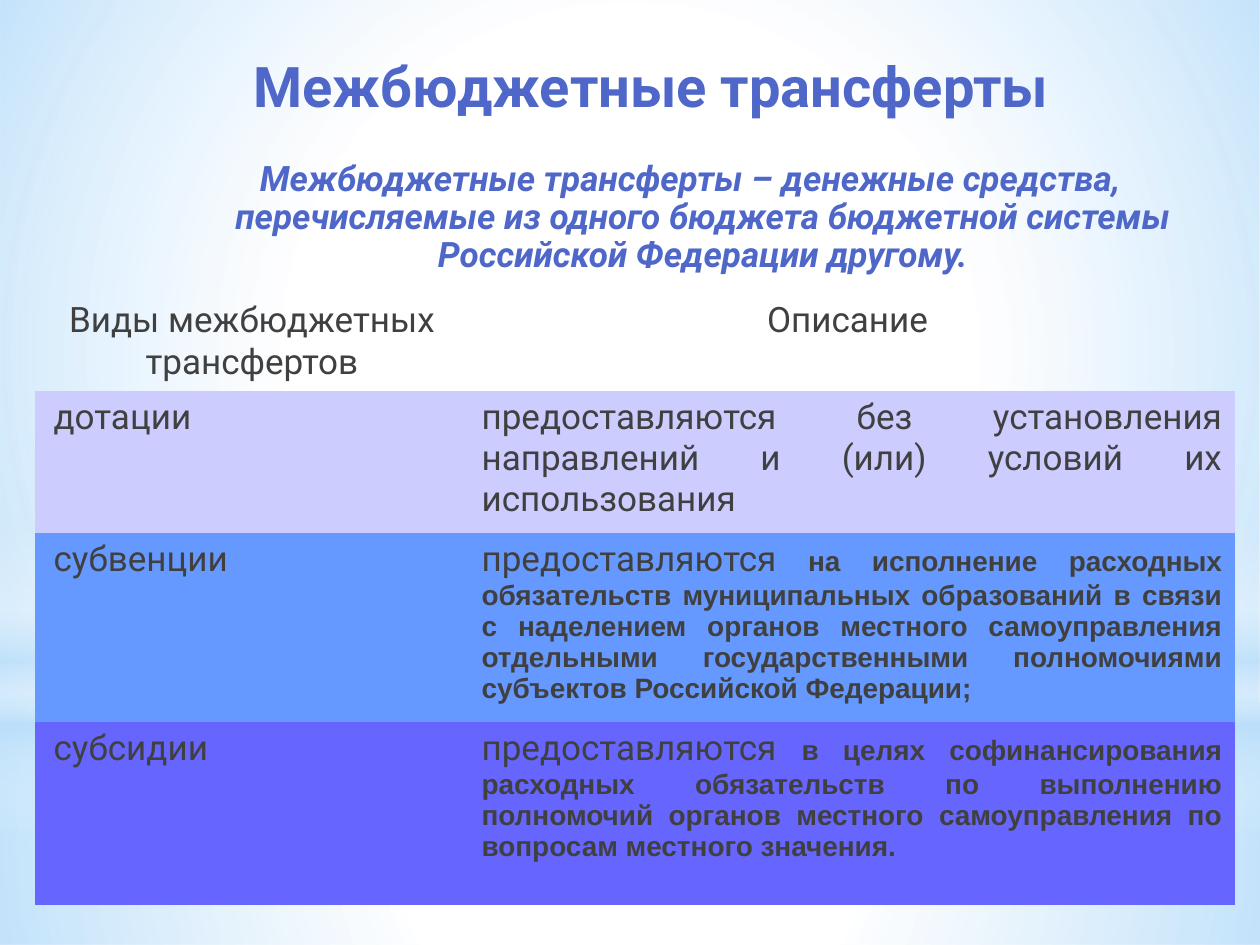
from lxml import etree
from pptx import Presentation
from pptx.dml.color import RGBColor as RGB
from pptx.enum.shapes import MSO_SHAPE as Shape
from pptx.enum.text import MSO_ANCHOR as Anchor, PP_ALIGN as Align
from pptx.oxml import parse_xml
from pptx.oxml.ns import nsdecls, qn
from pptx.util import Pt

SCALE = 914400 / 126  # EMU in one px
COLORS = {
    "white": "FFFFFF", "sky": "B4DCFA", "title": "4E67C8", "text": "404040",
    "lilac": "CCCCFF", "blue": "6699FF", "violet": "6666FF",
}
PLAIN_GRID = "{2D5ABB26-0587-4C30-8999-92F81FD0307C}"  # no style, no grid

# Font formats
TITLE = {"size": Pt(32), "name": "Roboto", "bold": True}
LEAD = {"size": Pt(20), "name": "Roboto", "bold": True, "italic": True}
CELL = {"size": Pt(20), "name": "Roboto", "bold": False}
NOTE = {"size": Pt(16), "name": "Arial", "bold": True}

# Background layers: shape, box, stops (percent, colour, opacity), radial or not
GLOWS = [
    (Shape.RECTANGLE, (0, 703, 1260, 242),
     [(0, "white", 91), (37, "white", 76), (100, "sky", 79)], True),
    (Shape.RECTANGLE, (0, 0, 1260, 703),
     [(0, "white", 89), (48, "white", 62), (100, "sky", 79)], True),
    (Shape.RECTANGLE, (0, 519, 1260, 315),
     [(0, "white", 0), (29, "white", 30), (45, "sky", 40),
      (55, "white", 26), (65, "sky", 60), (100, "white", 0)], False),
    (Shape.OVAL, (0, 220, 1260, 703),
     [(0, "white", 100), (56, "white", 0)], True),
]

# Table rows: height, fill, alignments, runs of each cell
COLS = (428, 772)
ROWS = [
    (95, None, (Align.CENTER, Align.CENTER),
     [("Виды межбюджетных трансфертов", CELL)], [("Описание ", CELL)]),
    (142, "lilac", (Align.JUSTIFY, Align.JUSTIFY),
     [("дотации", CELL)],
     [("предоставляются без установления направлений и (или) условий "
       "их использования", CELL)]),
    (178, "blue", (Align.LEFT, Align.JUSTIFY),
     [("субвенции", CELL)],
     [("предоставляются", CELL),
      (" на исполнение расходных обязательств муниципальных образований "
       "в связи с наделением органов местного самоуправления отдельными "
       "государственными полномочиями субъектов Российской Федерации;", NOTE)]),
    (183, "violet", (Align.LEFT, Align.JUSTIFY),
     [("субсидии", CELL)],
     [("предоставляются ", CELL),
      ("в целях софинансирования расходных обязательств по выполнению "
       "полномочий органов местного самоуправления по вопросам местного "
       "значения.", NOTE)]),
]


def px(n):
    return round(n * SCALE)


def color(name):
    return RGB.from_string(COLORS[name])


def put_runs(frame, runs, tint, align, indent):
    para = frame.paragraphs[0]
    para.alignment = align
    left, first = indent
    props = para._p.get_or_add_pPr()
    props.set("marL", str(px(left)))
    props.set("indent", str(px(first)))
    for text, style in runs:
        run = para.add_run()
        run.text = text
        for key, value in style.items():
            setattr(run.font, key, value)
        run.font.color.rgb = color(tint)
    return para


def add_glow(slide, kind, box, stops, radial):
    shape = slide.shapes.add_shape(kind, *map(px, box))
    shape.shadow.inherit = False
    shape.line.fill.background()
    grad = parse_xml(f'<a:gradFill {nsdecls("a")} rotWithShape="1"/>')
    marks = etree.SubElement(grad, qn("a:gsLst"))
    for pos, name, alpha in stops:
        mark = etree.SubElement(marks, qn("a:gs"), pos=str(pos * 1000))
        tint = etree.SubElement(mark, qn("a:srgbClr"), val=COLORS[name])
        etree.SubElement(tint, qn("a:alpha"), val=str(alpha * 1000))
    if radial:
        way = etree.SubElement(grad, qn("a:path"), path="circle")
        etree.SubElement(way, qn("a:fillToRect"),
                         {side: "50000" for side in "ltrb"})
    else:
        etree.SubElement(grad, qn("a:lin"), ang="5400000", scaled="0")
    shape._element.spPr.find(qn("a:prstGeom")).addnext(grad)


def add_text(slide, box, text, style, indent):
    frame = slide.shapes.add_textbox(*map(px, box)).text_frame
    frame.word_wrap = True
    frame.vertical_anchor = Anchor.TOP
    return put_runs(frame, [(text, style)], "title", Align.CENTER, indent)


def add_grid(slide, left, top):
    high = sum(row[0] for row in ROWS)
    box = (left, top, sum(COLS), high)
    table = slide.shapes.add_table(len(ROWS), len(COLS), *map(px, box)).table
    table.first_row = table.horz_banding = False
    table._tbl.tblPr.find(qn("a:tableStyleId")).text = PLAIN_GRID
    for col, width in zip(table.columns, COLS):
        col.width = px(width)
    for row, (height, fill, aligns, *texts) in zip(table.rows, ROWS):
        row.height = px(height)
        for cell, align, runs in zip(row.cells, aligns, texts):
            if fill:
                cell.fill.solid()
                cell.fill.fore_color.rgb = color(fill)
            else:
                cell.fill.background()
            put_runs(cell.text_frame, runs, "text", align, (6, 0))


def main():
    deck = Presentation()
    deck.slide_width, deck.slide_height = px(1260), px(945)
    slide = deck.slides.add_slide(deck.slide_layouts[6])

    # Background
    back = slide.background.fill
    back.solid()
    back.fore_color.rgb = color("white")
    for glow in GLOWS:
        add_glow(slide, *glow)

    # Title and definition
    add_text(slide, (203, 45, 897, 158), "Межбюджетные трансферты",
             TITLE, (44, -44))
    lead = add_text(
        slide, (158, 155, 1058, 139),
        "Межбюджетные трансферты – денежные средства, перечисляемые из "
        "одного бюджета бюджетной системы Российской Федерации другому.",
        LEAD, (32, -25))
    lead.line_spacing = 0.9

    # Kinds of transfers
    add_grid(slide, 35, 294)
    deck.save("out.pptx")


if __name__ == "__main__":
    main()
